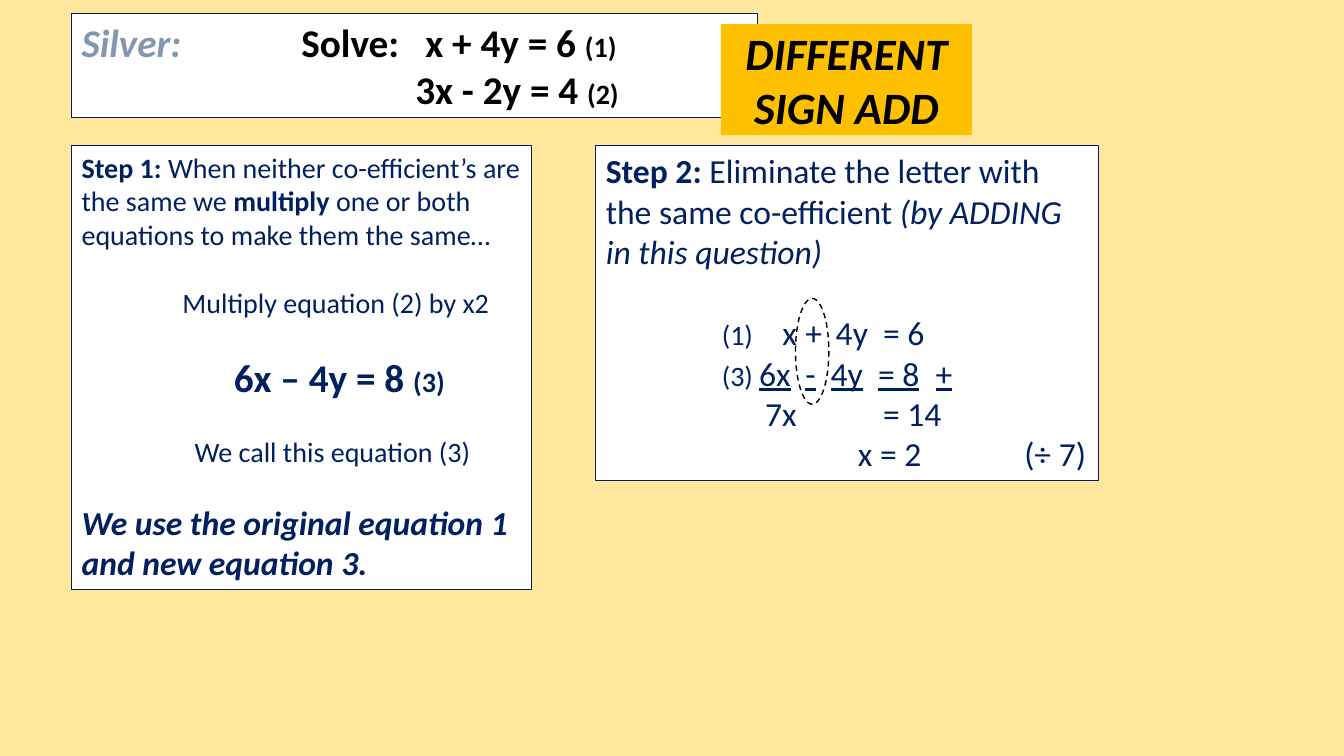
from dataclasses import dataclass

from lxml import etree
from pptx import Presentation
from pptx.dml.color import RGBColor
from pptx.enum.dml import MSO_LINE
from pptx.enum.shapes import MSO_SHAPE
from pptx.enum.text import MSO_ANCHOR, MSO_AUTO_SIZE, PP_ALIGN
from pptx.oxml.ns import qn
from pptx.util import Inches, Pt

RECTANGLE, OVAL = MSO_SHAPE.RECTANGLE, MSO_SHAPE.OVAL
LEFT, CENTER = PP_ALIGN.LEFT, PP_ALIGN.CENTER
TOP, MIDDLE = MSO_ANCHOR.TOP, MSO_ANCHOR.MIDDLE
GROW, FIXED = MSO_AUTO_SIZE.SHAPE_TO_FIT_TEXT, MSO_AUTO_SIZE.NONE
DASH = MSO_LINE.DASH


@dataclass(frozen=True)
class Theme:
    font: str = "Calibri"
    background: str = "FFE79E"
    paper: str = "FFFFFF"
    accent: str = "FFC000"
    navy: str = "002060"
    black: str = "000000"
    muted: str = "8497B0"
    small: int = 20
    medium: int = 24
    large: int = 28
    banner: int = 32


@dataclass
class Line:
    runs: list
    stops: tuple = ()
    gap: float = 0


class LessonSlide:
    """Draws cards and rings on one slide, placed by percent shares of its size."""

    def __init__(self, presentation, theme):
        self.theme = theme
        self.width = presentation.slide_width
        self.height = presentation.slide_height
        self.slide = presentation.slides.add_slide(presentation.slide_layouts[6])
        fill = self.slide.background.fill
        fill.solid()
        fill.fore_color.rgb = RGBColor.from_string(theme.background)

    def outline(self, kind, place, fill=None, line=None, weight=0.75):
        left, top, width, height = place
        shape = self.slide.shapes.add_shape(
            kind, int(self.width * left / 100), int(self.height * top / 100),
            int(self.width * width / 100), int(self.height * height / 100))
        shape.shadow.inherit = False
        if fill:
            shape.fill.solid()
            shape.fill.fore_color.rgb = RGBColor.from_string(fill)
        else:
            shape.fill.background()
        if line:
            shape.line.color.rgb = RGBColor.from_string(line)
            shape.line.width = Pt(weight)
        else:
            shape.line.fill.background()
        return shape

    def ring(self, place):
        shape = self.outline(OVAL, place, line=self.theme.black, weight=1)
        shape.line.dash_style = DASH

    def card(self, place, lines, color):
        shape = self.outline(RECTANGLE, place, self.theme.paper, self.theme.navy)
        self.add_lines(shape, lines, color, LEFT, TOP, GROW)

    def badge(self, place, lines):
        shape = self.outline(RECTANGLE, place, self.theme.accent)
        self.add_lines(shape, lines, self.theme.black, CENTER, MIDDLE, FIXED)

    def add_lines(self, shape, lines, color, alignment, anchor, fit):
        frame = shape.text_frame
        frame.word_wrap = True
        frame.vertical_anchor = anchor
        frame.auto_size = fit
        for index, line in enumerate(lines):
            paragraph = frame.add_paragraph() if index else frame.paragraphs[0]
            paragraph.alignment = alignment
            if line.gap:
                paragraph.space_before = Pt(line.gap)
            self.set_stops(paragraph, line.stops)
            for text, size, style, *own_color in line.runs:
                run = paragraph.add_run()
                run.text = text
                font = run.font
                font.name = self.theme.font
                font.size = Pt(size)
                font.bold = "b" in style
                font.italic = "i" in style
                font.underline = "u" in style
                font.color.rgb = RGBColor.from_string((own_color or [color])[0])

    def set_stops(self, paragraph, stops):
        if stops:
            properties = paragraph._p.get_or_add_pPr()
            tab_list = etree.SubElement(properties, qn("a:tabLst"))
            for stop in stops:
                etree.SubElement(tab_list, qn("a:tab"), pos=str(Inches(stop)), algn="l")


def main():
    presentation = Presentation()
    presentation.slide_width = Inches(13.33)
    presentation.slide_height = Inches(7.5)
    theme = Theme()
    small, medium, large = theme.small, theme.medium, theme.large
    lesson = LessonSlide(presentation, theme)

    lesson.card((5.33, 1.73, 51.01, 13.87), [
        Line([("Silver:", large, "bi", theme.muted),
              ("\tSolve:\tx + 4y = 6 ", large, "b"), ("(1)", small, "b")], (2.18, 3.41)),
        Line([("\t3x - 2y = 4 ", large, "b"), ("(2)", small, "b")], (3.31,)),
    ], theme.black)

    lesson.badge((53.64, 3.2, 18.68, 14.67),
                 [Line([("DIFFERENT SIGN ADD", theme.banner, "bi")])])

    lesson.card((44.34, 19.2, 37.43, 44.4), [
        Line([("Step 2: ", medium, "b"),
              ("Eliminate the letter with the same co-efficient ", medium, ""),
              ("(by ADDING in this question)", medium, "i")]),
        Line([("\t(1)", small, ""), ("\tx\t+\t4y\t= 6", medium, "")],
             (1.15, 1.75, 1.98, 2.28, 2.75), gap=29.3),
        Line([("\t(3)\t", small, ""), ("6x\t-\t4y\t= 8\t+", medium, "u")],
             (1.15, 1.52, 1.98, 2.23, 2.7, 3.27)),
        Line([("\t7x\t= 14", medium, "")], (1.58, 2.75)),
        Line([("\tx = 2\t(÷ 7)", medium, "")], (2.5, 4.15)),
    ], theme.navy)

    lesson.card((5.33, 19.2, 34.21, 58.8), [
        Line([("Step 1: ", small, "b"),
              ("When neither co-efficient’s are the same we ", small, ""),
              ("multiply", small, "b"),
              (" one or both equations to make them the same…", small, "")]),
        Line([("\tMultiply equation (2) by x2", small, "")], (1,), gap=24.4),
        Line([("\t6x – 4y = 8 ", large, "b"), ("(3)", small, "b")], (1.51,), gap=24.4),
        Line([("\tWe call this equation (3)", small, "")], (1.12,), gap=24.4),
        Line([("We use the original equation 1 and new equation 3.", medium, "bi")],
             gap=24.4),
    ], theme.navy)

    lesson.ring((59.19, 39.47, 2.48, 14))
    presentation.save("out.pptx")


if __name__ == "__main__":
    main()
